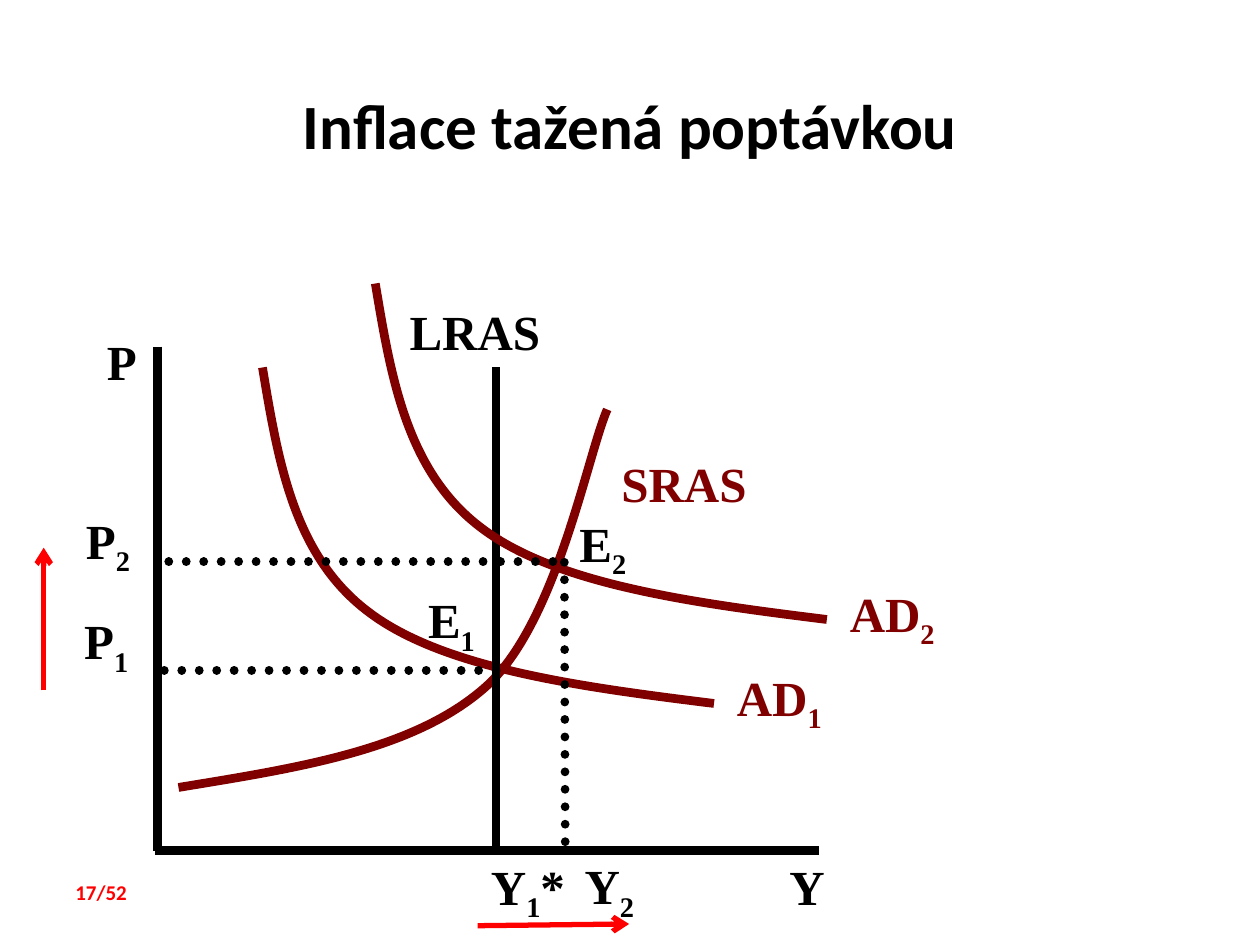
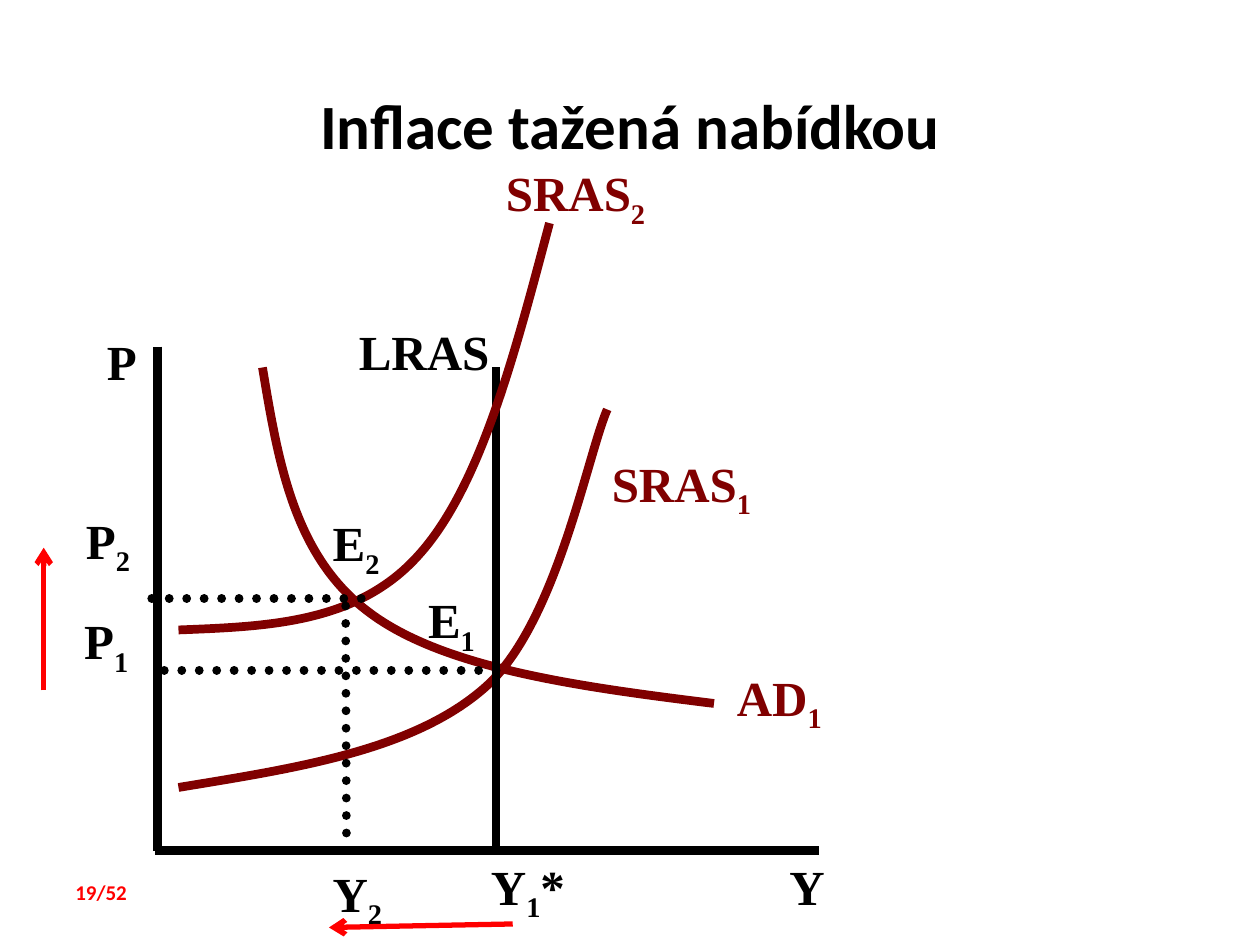
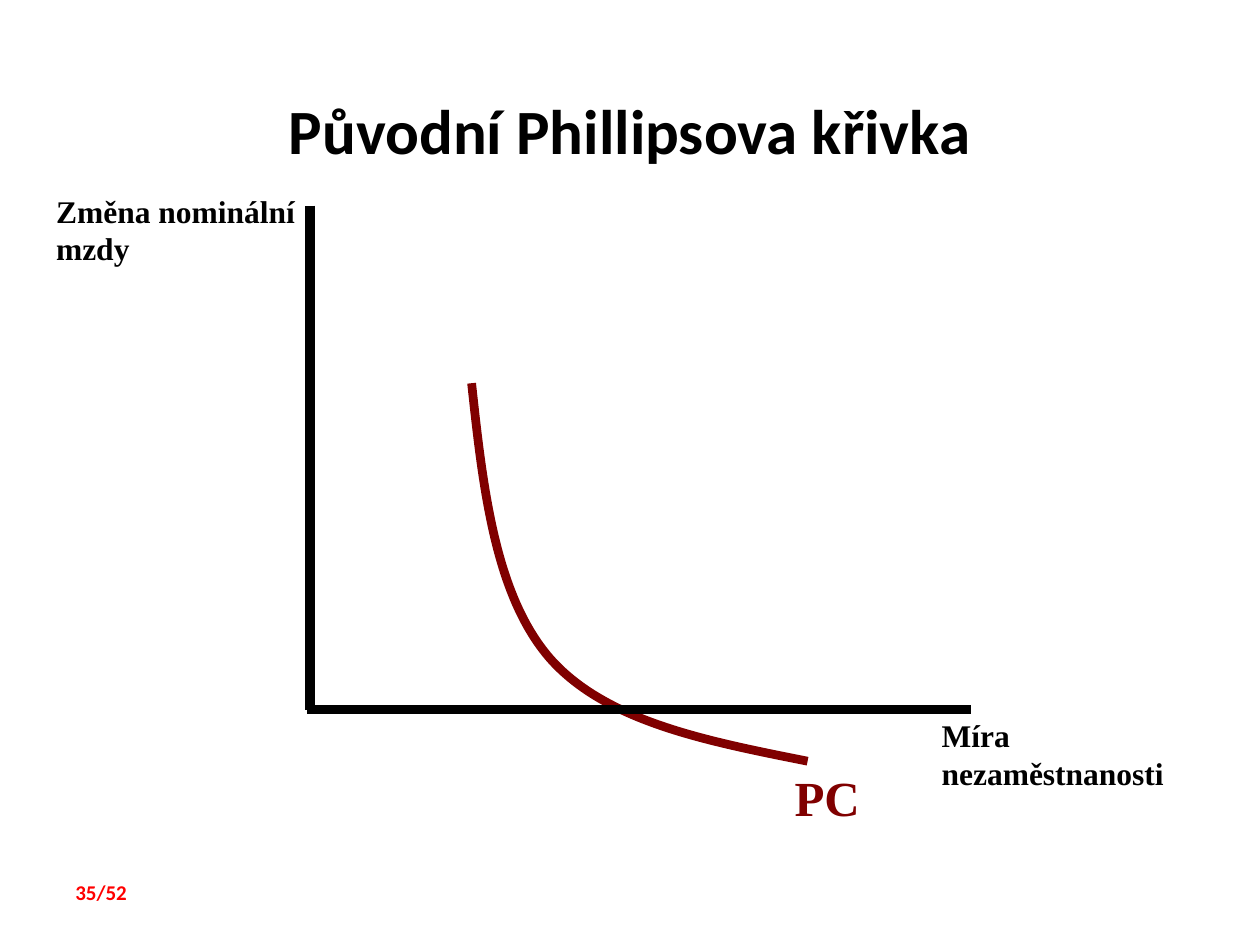
from pptx import Presentation
from pptx.dml.color import RGBColor
from pptx.enum.dml import MSO_LINE_DASH_STYLE as DASH
from pptx.enum.shapes import MSO_CONNECTOR as CONNECTOR
from pptx.enum.text import MSO_AUTO_SIZE as AUTO_SIZE, PP_ALIGN as ALIGN
from pptx.oxml.ns import qn
from pptx.util import Pt
from lxml.etree import SubElement

BLACK, MAROON, RED = "000000", "800000", "FF0000"
SERIF, SANS = "Times New Roman", "Calibri"

DEMAND = [(150, 210), (159, 264), (168, 318), (211, 350),
          (253.5, 382), (331, 392.5), (408, 402)]
SUPPLY_1 = [(102, 450), (169, 439), (236, 429), (277, 393),
            (318, 357), (335.5, 260.5), (347, 234)]
SUPPLY_2 = [(102, 360), (152.5, 358), (204, 356.5), (239, 317.5),
            (274.5, 278.5), (294, 203), (314, 127.5)]
PHILLIPS = [(269.5, 219), (276, 279.5), (283, 340.5), (314.5, 376.5),
            (346.5, 412.5), (404, 423.5), (461.5, 435)]


def rgb(code):
    return RGBColor.from_string(code)


def add_text(page, left, top, width, height, spans, size, font=SERIF,
             color=BLACK, align=ALIGN.LEFT):
    """Add a bold one-paragraph box; spans are (text, baseline percent) pairs."""
    box = page.shapes.add_textbox(Pt(left), Pt(top), Pt(width), Pt(height))
    frame = box.text_frame
    frame.word_wrap = True
    frame.auto_size = AUTO_SIZE.SHAPE_TO_FIT_TEXT
    para = frame.paragraphs[0]
    para.alignment = align
    for text, baseline in spans:
        span = para.add_run()
        span.text = text
        span.font.name = font
        span.font.size = Pt(size)
        span.font.bold = True
        span.font.color.rgb = rgb(color)
        if baseline:
            span._r.get_or_add_rPr().set("baseline", str(baseline * 1000))


def add_label(page, left, top, text, subscript="", suffix="", width=48, color=BLACK):
    spans = [(text, 0), (subscript, -25), (suffix, 0)]
    add_text(page, left, top, width, 41, [span for span in spans if span[0]],
             28, color=color)


def add_line(page, start, end, color=BLACK, width=5):
    line = page.shapes.add_connector(CONNECTOR.STRAIGHT, *map(Pt, start + end))
    line.line.color.rgb = rgb(color)
    line.line.width = Pt(width)
    SubElement(line._element.spPr, qn("a:effectLst"))
    return line


def add_dots(page, start, end):
    line = add_line(page, start, end).line
    line.dash_style = DASH.ROUND_DOT
    line._get_or_add_ln().set("cap", "rnd")


def add_arrow(page, start, end):
    line = add_line(page, start, end, RED, 3).line
    SubElement(line._get_or_add_ln(), qn("a:tailEnd"), type="arrow")


def add_curve(page, points, dx=0, dy=0):
    """Draw joined cubic curves: a start point, then three points per curve."""
    start, *rest = [(Pt(x + dx), Pt(y + dy)) for x, y in points]
    builder = page.shapes.build_freeform(*start)
    builder.add_line_segments(rest, close=False)
    curve = builder.convert_to_shape()
    curve.shadow.inherit = False
    curve.fill.background()
    curve.line.color.rgb = rgb(MAROON)
    curve.line.width = Pt(5)
    segments = list(curve._element.iter(qn("a:lnTo")))
    outline = segments[0].getparent()
    for first in range(0, len(segments), 3):
        bezier = SubElement(outline, qn("a:cubicBezTo"))
        for segment in segments[first:first + 3]:
            bezier.append(segment[0])
            outline.remove(segment)


def add_axes(page, left, top):
    bottom = top + 288
    add_line(page, (left, top), (left, bottom), width=5.5)
    add_line(page, (left - 1.5, bottom), (left + 378, bottom))


def add_demand(page, subscript, dx=0, dy=0):
    add_curve(page, DEMAND, dx, dy)
    add_label(page, 414 + dx, 378 + dy, "AD", subscript, width=84, color=MAROON)


def add_page(deck, title, number, title_top):
    page = deck.slides.add_slide(deck.slide_layouts[6])
    add_text(page, 0, title_top, 720, 51, [(title, 0)], 36, SANS, align=ALIGN.CENTER)
    add_text(page, 36, 499, 66, 22, [(f"{number}/52", 0)], 12, SANS, RED)
    return page


def add_market(page):
    """Draw the first equilibrium, shared by both kinds of inflation."""
    add_axes(page, 90, 198)
    add_label(page, 54, 186, "P")
    add_label(page, 444, 486, "Y")
    add_demand(page, "1")
    add_curve(page, SUPPLY_1)
    add_dots(page, (283.5, 383), (88.5, 383))
    add_line(page, (283.5, 486), (283.5, 210))
    add_label(page, 41, 345.5, "P", "1")
    add_label(page, 42, 288, "P", "2")
    add_label(page, 273.5, 486, "Y", "1", "*", width=66)
    add_label(page, 237.5, 333.5, "E", "1")
    add_arrow(page, (25, 394.5), (25, 313))


def add_demand_pull(deck):
    page = add_page(deck, "Inflace tažená poptávkou", 17, 46)
    add_market(page)
    add_label(page, 348, 255.5, "SRAS", width=142, color=MAROON)
    add_label(page, 227, 169, "LRAS", width=108)
    add_demand(page, "2", 64.5, -48)
    add_dots(page, (316, 321), (90, 321))
    add_dots(page, (323, 481), (322.5, 321))
    add_label(page, 327, 485.5, "Y", "2", width=66)
    add_label(page, 324, 290, "E", "2")
    add_arrow(page, (273, 529), (359.5, 528))


def add_cost_push(deck):
    page = add_page(deck, "Inflace tažená nabídkou", 19, 46)
    add_market(page)
    add_label(page, 342.5, 255.5, "SRAS", "1", width=142, color=MAROON)
    add_label(page, 198, 180, "LRAS", width=108)
    add_curve(page, SUPPLY_2)
    add_label(page, 282, 89.5, "SRAS", "2", width=111, color=MAROON)
    add_dots(page, (206.5, 342), (85, 342))
    add_dots(page, (198, 486), (197.5, 343.5))
    add_label(page, 183, 490, "Y", "2", width=66)
    add_label(page, 183, 289.5, "E", "2")
    add_arrow(page, (293, 528), (188, 530))


def add_phillips_curve(deck):
    page = add_page(deck, "Původní Phillipsova křivka", 35, 49)
    add_curve(page, PHILLIPS)
    add_label(page, 447, 435, "PC", width=84, color=MAROON)
    add_axes(page, 177, 117.5)
    add_text(page, 25, 106, 163.5, 51, [("Změna nominální mzdy", 0)], 18)
    add_text(page, 531, 405.5, 163.5, 51, [("Míra nezaměstnanosti", 0)], 18)


def main():
    deck = Presentation()
    deck.slide_width, deck.slide_height = Pt(720), Pt(540)
    add_demand_pull(deck)
    add_cost_push(deck)
    add_phillips_curve(deck)
    deck.save("out.pptx")


if __name__ == "__main__":
    main()
